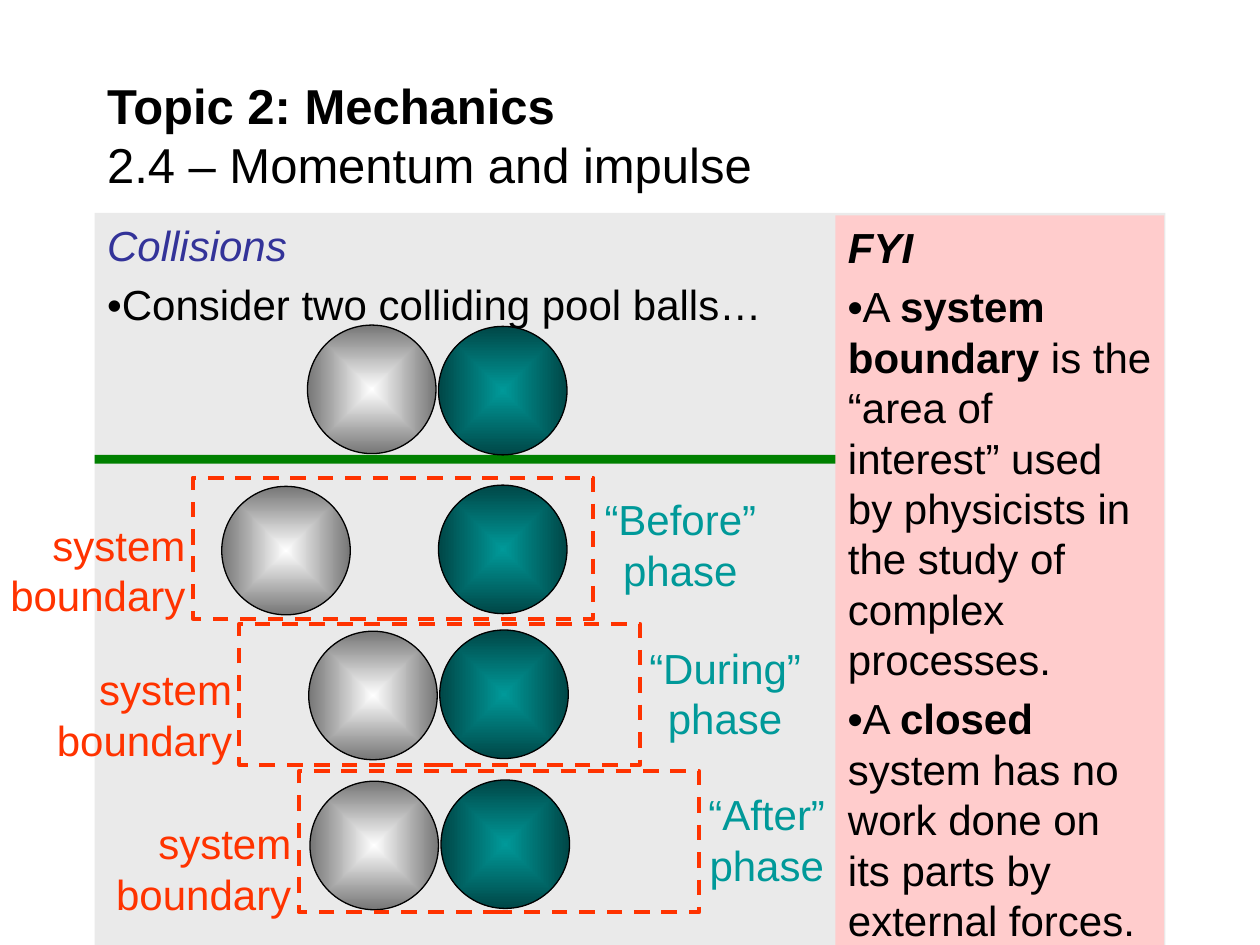
"""Build a slide on system boundaries in a two-ball collision."""
from dataclasses import dataclass

from lxml import etree
from pptx import Presentation
from pptx.dml.color import RGBColor
from pptx.enum.dml import MSO_LINE
from pptx.enum.shapes import MSO_SHAPE
from pptx.enum.text import MSO_ANCHOR, MSO_AUTO_SIZE, PP_ALIGN
from pptx.oxml.ns import qn
from pptx.util import Inches, Pt

RECT, OVAL = MSO_SHAPE.RECTANGLE, MSO_SHAPE.OVAL
LEFT, CENTER, RIGHT = PP_ALIGN.LEFT, PP_ALIGN.CENTER, PP_ALIGN.RIGHT
DASH = MSO_LINE.DASH
TOP, MIDDLE = MSO_ANCHOR.TOP, MSO_ANCHOR.MIDDLE
NO_FIT = MSO_AUTO_SIZE.NONE


@dataclass(frozen=True)
class Theme:
    font: str = "Arial"
    title_size: float = 28
    body_size: float = 24
    ink: str = "000000"
    heading: str = "333399"
    panel: str = "EAEAEA"
    note: str = "FFCCCC"
    table: str = "008000"
    boundary: str = "FF3300"
    phase: str = "009999"
    cue_ball: tuple = ("FFFFFF", "767676")
    teal_ball: tuple = ("009999", "004747")


@dataclass(frozen=True)
class Run:
    text: str
    bold: bool = False
    italic: bool = False
    color: str = Theme.ink


@dataclass(frozen=True)
class Phase:
    name: str
    left: float
    top: float
    cue: tuple
    teal: tuple
    label: tuple
    label_width: float
    boundary_top: float


T = Theme()
BALL = 1.02
PHASES = [
    Phase("“Before”", 1.53, 3.79, (1.76, 3.86), (3.48, 3.85), (4.4, 3.87), 2, 4.07),
    Phase("“During”", 1.9, 4.95, (2.45, 5.01), (3.49, 5), (4.75, 5.05), 2.01, 5.22),
    Phase("“After”", 2.37, 6.12, (2.46, 6.2), (3.5, 6.19), (5.19, 6.21), 1.79, 6.44),
]
COLLISIONS = [
    [Run("Collisions", italic=True, color=T.heading)],
    [Run("•Consider two colliding pool balls…")],
]
FYI = [
    [Run("FYI", bold=True, italic=True)],
    [Run("•", bold=True), Run("A "), Run("system boundary", bold=True),
     Run(" is the “area of interest” used by physicists in the study of complex processes.")],
    [Run("•", bold=True), Run("A "), Run("closed", bold=True),
     Run(" system has no work done on its parts by external forces.")],
]


def rgb(color: str) -> RGBColor:
    """Turn a hex string into a colour."""
    return RGBColor.from_string(color)


def place(sp, left: float, top: float, width: float, height: float) -> None:
    """Move and size a shape, in inches."""
    sp.left, sp.top = Inches(left), Inches(top)
    sp.width, sp.height = Inches(width), Inches(height)


def add_shape(s, kind, left: float, top: float, width: float, height: float):
    """Add a preset shape without a shadow."""
    sp = s.shapes.add_shape(kind, Inches(left), Inches(top), Inches(width), Inches(height))
    sp.shadow.inherit = False
    return sp


def add_runs(p, runs: list[Run], size: float) -> None:
    """Write styled runs into a paragraph."""
    p.font.name, p.font.size = T.font, Pt(size)
    for run in runs:
        r = p.add_run()
        r.text = run.text
        r.font.name, r.font.size = T.font, Pt(size)
        r.font.bold, r.font.italic = run.bold, run.italic
        r.font.color.rgb = rgb(run.color)


def fill_panel(sp, color: str, paragraphs: list[list[Run]]) -> None:
    """Turn a body placeholder into a coloured panel of text."""
    sp.fill.solid()
    sp.fill.fore_color.rgb = rgb(color)
    tf = sp.text_frame
    tf.auto_size, tf.vertical_anchor = NO_FIT, TOP
    for i, runs in enumerate(paragraphs):
        p = tf.add_paragraph() if i else tf.paragraphs[0]
        p.space_before = Pt(5)
        add_runs(p, runs, T.body_size)
        pPr = p._p.get_or_add_pPr()
        pPr.set("marL", "0")
        pPr.set("indent", "0")
        pPr.find(qn("a:spcBef")).addnext(etree.Element(qn("a:buNone")))


def add_ball(s, left: float, top: float, colors: tuple) -> None:
    """Add a ball shaded from its centre outwards."""
    sp = add_shape(s, OVAL, left, top, BALL, BALL)
    sp.fill.gradient()
    for stop, color in zip(sp.fill.gradient_stops, colors):
        stop.color.rgb = rgb(color)
    grad = sp._element.spPr.find(qn("a:gradFill"))
    grad.remove(grad.find(qn("a:lin")))
    shade = etree.SubElement(grad, qn("a:path"), path="shape")
    etree.SubElement(shade, qn("a:fillToRect"), l="50000", t="50000", r="50000", b="50000")
    sp.line.color.rgb = rgb(T.ink)
    sp.line.width = Pt(0.75)


def add_label(s, text: str, left: float, top: float, width: float, color: str, align) -> None:
    """Add a two-line label."""
    sp = s.shapes.add_textbox(Inches(left), Inches(top), Inches(width), Inches(0.91))
    sp.text_frame.word_wrap = True
    p = sp.text_frame.paragraphs[0]
    p.text, p.alignment = text, align
    p.font.name, p.font.size = T.font, Pt(T.body_size)
    p.font.color.rgb = rgb(color)


def add_phase(s, phase: Phase) -> None:
    """Add the balls, boundary and labels of one phase."""
    add_ball(s, *phase.cue, T.cue_ball)
    add_ball(s, *phase.teal, T.teal_ball)
    sp = add_shape(s, RECT, phase.left, phase.top, 3.18, 1.12)
    sp.fill.background()
    sp.line.color.rgb = rgb(T.boundary)
    sp.line.width, sp.line.dash_style = Pt(2.25), DASH
    add_label(s, f"{phase.name} phase", *phase.label, phase.label_width, T.phase, CENTER)
    add_label(s, "system boundary", phase.left - 1.63, phase.boundary_top, 1.67,
              T.boundary, RIGHT)


def main() -> None:
    """Build and save the slide."""
    prs = Presentation()
    prs.slide_width, prs.slide_height = Inches(10), Inches(7.5)
    s = prs.slides.add_slide(prs.slide_layouts[3])
    title, panel, note = s.placeholders

    place(title, 0.75, 0.58, 8.5, 0.98)
    title.text_frame.auto_size, title.text_frame.vertical_anchor = NO_FIT, MIDDLE
    p = title.text_frame.paragraphs[0]
    p.alignment = LEFT
    add_runs(p, [Run("Topic 2: Mechanics", bold=True)], T.title_size)
    p.add_line_break()
    add_runs(p, [Run("2.4 – Momentum and impulse")], T.title_size)

    place(panel, 0.75, 1.69, 8.5, 5.81)
    fill_panel(panel, T.panel, COLLISIONS)

    bar = add_shape(s, RECT, 0.75, 3.61, 6.19, 0.07)
    bar.fill.solid()
    bar.fill.fore_color.rgb = rgb(T.table)
    bar.line.fill.background()

    place(note, 6.63, 1.71, 2.61, 5.81)
    fill_panel(note, T.note, FYI)
    bar._element.addnext(note._element)

    add_ball(s, 2.44, 2.58, T.cue_ball)
    add_ball(s, 3.48, 2.59, T.teal_ball)
    for phase in PHASES:
        add_phase(s, phase)
    prs.save("out.pptx")


if __name__ == "__main__":
    main()
